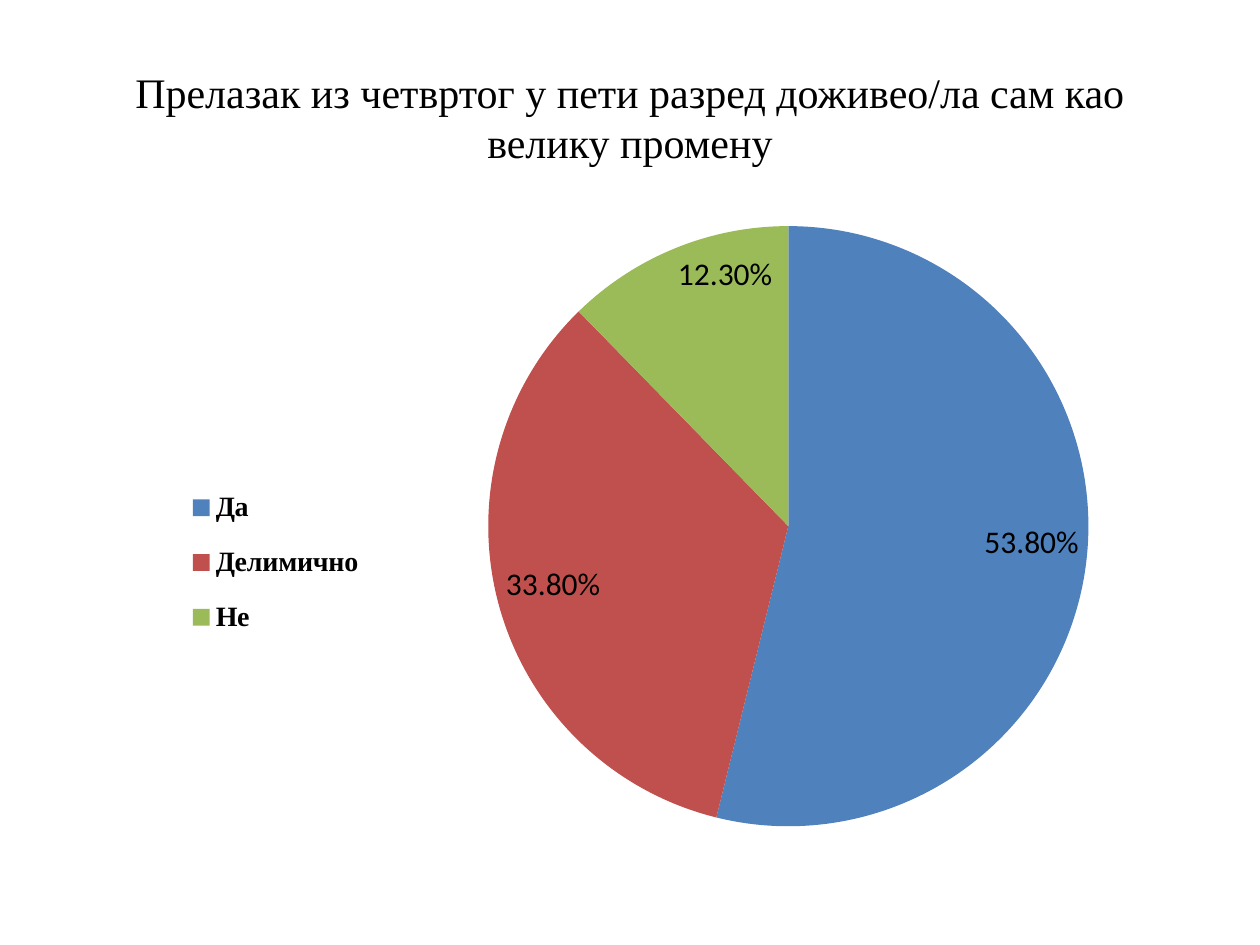
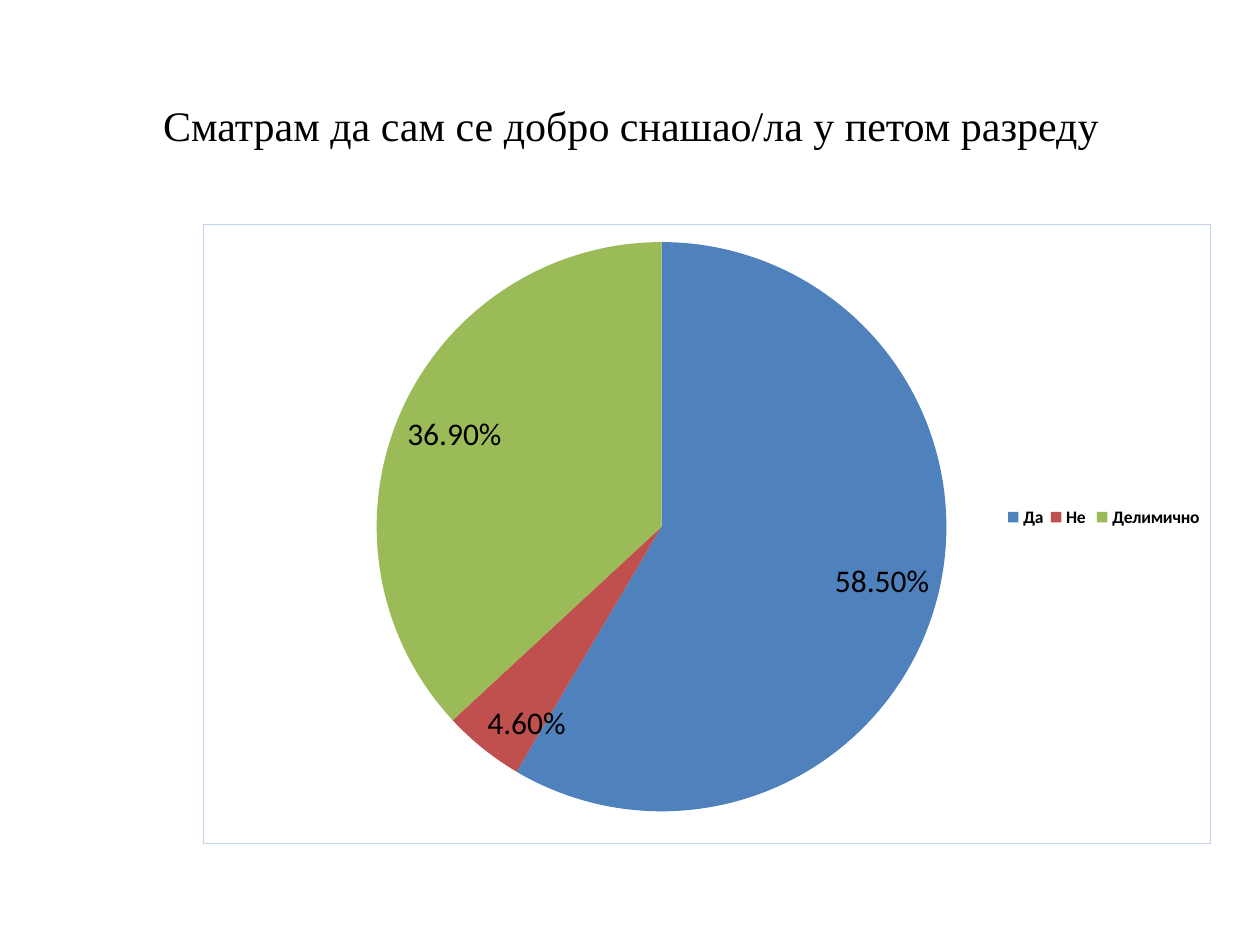
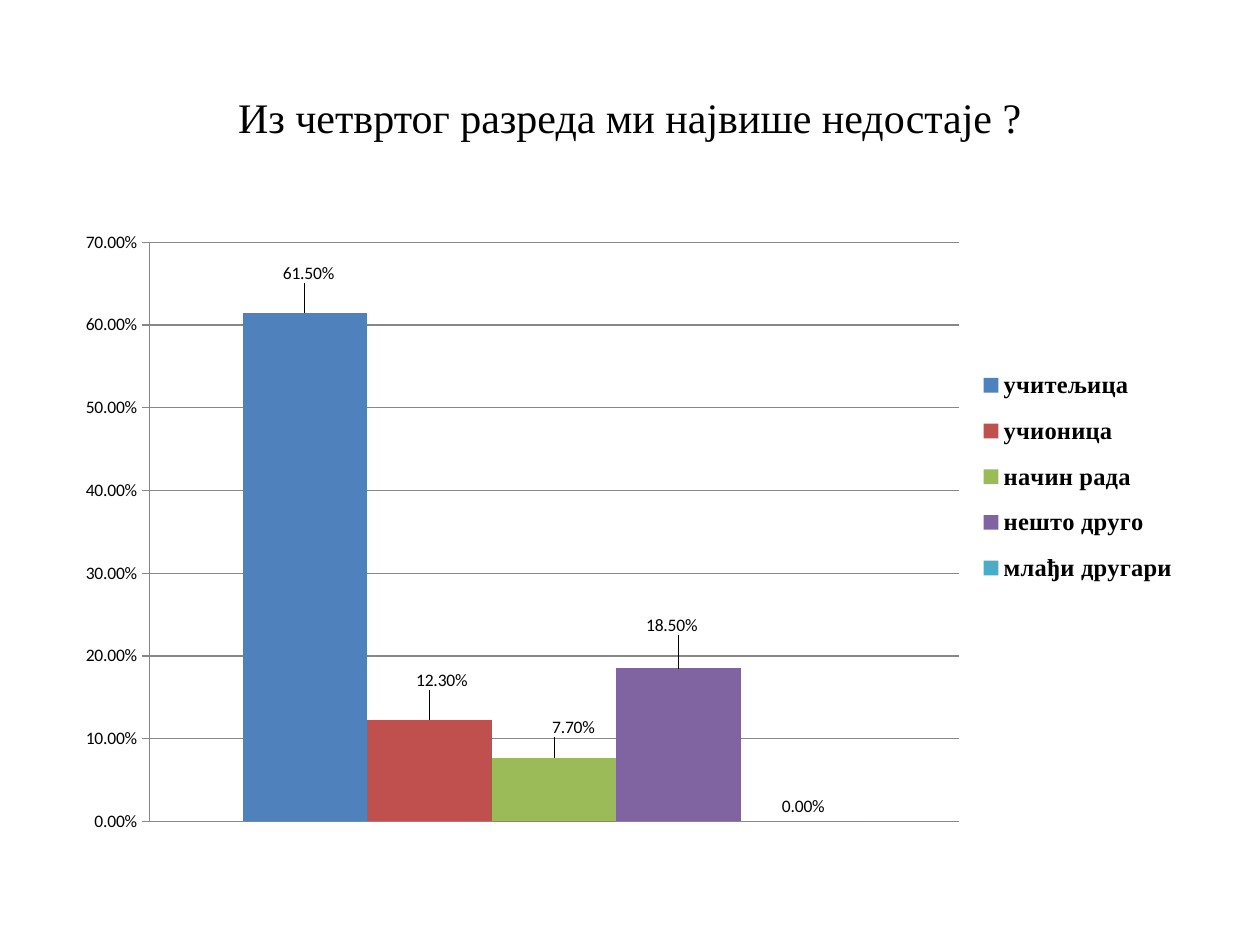
from dataclasses import dataclass
from typing import NamedTuple

from pptx import Presentation
from pptx.chart.chart import Chart
from pptx.chart.data import CategoryChartData
from pptx.dml.color import RGBColor
from pptx.enum.chart import XL_CHART_TYPE, XL_LABEL_POSITION, XL_LEGEND_POSITION, XL_TICK_MARK
from pptx.enum.text import MSO_ANCHOR, PP_ALIGN
from pptx.oxml import parse_xml
from pptx.oxml.ns import nsdecls
from pptx.slide import Slide
from pptx.util import Pt

BLACK = RGBColor(0x00, 0x00, 0x00)
WHITE = RGBColor(0xFF, 0xFF, 0xFF)
GRAY = RGBColor(0x87, 0x87, 0x87)
PALE = RGBColor(0xC2, 0xD1, 0xED)
HUES = [
    RGBColor(0x4F, 0x81, 0xBD),
    RGBColor(0xC0, 0x50, 0x4D),
    RGBColor(0x9B, 0xBB, 0x59),
    RGBColor(0x80, 0x64, 0xA2),
    RGBColor(0x4B, 0xAC, 0xC6),
]
SERIF = "Times New Roman"
SANS = "Calibri"
PERCENT = "0.00%"


class Box(NamedTuple):
    left: float
    top: float
    width: float
    height: float


class Shift(NamedTuple):
    right: float
    down: float


@dataclass(frozen=True)
class Key:
    box: Box
    side: XL_LEGEND_POSITION
    size: float
    font: str


@dataclass(frozen=True)
class Page:
    title: str
    head: Box
    frame: Box
    plot: Box
    key: Key
    shares: dict[str, float]
    border: RGBColor | None = None
    shifts: tuple[Shift, ...] = ()


LEFT = XL_LEGEND_POSITION.LEFT
RIGHT = XL_LEGEND_POSITION.RIGHT
HEAD = Box(36, 21.6, 648, 90)

PAGES = [
    Page(
        "Прелазак из четвртог у пети разред доживео/ла сам као велику промену",
        HEAD,
        Box(99.4, 100, 587, 382.4),
        Box(279, 129.2, 343, 343),
        Key(Box(106, 268, 103, 107), LEFT, 16, SERIF),
        {"Да": 0.538, "Делимично": 0.338, "Не": 0.123},
    ),
    Page(
        "Сматрам да сам се добро снашао/ла у петом разреду",
        HEAD._replace(left=36.7, top=26),
        Box(116, 128, 576, 354.4),
        Box(215, 138, 326, 326),
        Key(Box(572, 285, 118, 21), RIGHT, 10, SANS),
        {"Да": 0.585, "Не ": 0.046, "Делимично": 0.369},
        border=PALE,
    ),
    Page(
        "Из четвртог разреда ми највише недостаје ?",
        HEAD,
        Box(36, 126, 648, 356.4),
        Box(85.3, 138.5, 462.7, 331),
        Key(Box(554, 202, 124, 141), RIGHT, 14, SERIF),
        {
            "учитељица": 0.615,
            "учионица": 0.123,
            "начин рада": 0.077,
            "нешто друго": 0.185,
            "млађи другари": 0,
        },
        shifts=(Shift(2, -14), Shift(7, -14), Shift(11, -9), Shift(-4, -16)),
    ),
]


def points(box: Box) -> list[Pt]:
    return [Pt(side) for side in box]


def add_title(slide: Slide, page: Page) -> None:
    frame = slide.shapes.add_textbox(*points(page.head)).text_frame
    frame.word_wrap = True
    frame.vertical_anchor = MSO_ANCHOR.MIDDLE
    line = frame.paragraphs[0]
    line.alignment = PP_ALIGN.CENTER
    run = line.add_run()
    run.text = page.title
    run.font.name = SERIF
    run.font.size = Pt(24)
    run.font.color.rgb = BLACK


def layout(parts: dict[str, object]):
    rows = "".join(f'<c:{name} val="{value}"/>' for name, value in parts.items())
    return parse_xml(f'<c:layout {nsdecls("c")}><c:manualLayout>{rows}</c:manualLayout></c:layout>')


def fit(box: Box, frame: Box) -> dict[str, object]:
    return {
        "xMode": "edge",
        "yMode": "edge",
        "x": round((box.left - frame.left) / frame.width, 4),
        "y": round((box.top - frame.top) / frame.height, 4),
        "w": round(box.width / frame.width, 4),
        "h": round(box.height / frame.height, 4),
    }


def place_parts(chart: Chart, page: Page) -> None:
    root = chart.element
    for old in root.xpath(".//c:plotArea/c:layout | .//c:legend/c:layout"):
        old.getparent().remove(old)
    plot = {"layoutTarget": "inner"} | fit(page.plot, page.frame)
    root.xpath(".//c:plotArea")[0].insert(0, layout(plot))
    root.xpath(".//c:legendPos")[0].addnext(layout(fit(page.key.box, page.frame)))


def add_edge(chart: Chart, color: RGBColor | None) -> None:
    paint = f'<a:solidFill><a:srgbClr val="{color}"/></a:solidFill>' if color else "<a:noFill/>"
    edge = parse_xml(
        f'<c:spPr {nsdecls("c", "a")}><a:noFill/><a:ln w="{Pt(0.75)}">{paint}</a:ln></c:spPr>'
    )
    chart.element.xpath("./c:chart")[0].addnext(edge)


def add_chart(slide: Slide, page: Page, kind: XL_CHART_TYPE, data: CategoryChartData) -> Chart:
    chart = slide.shapes.add_chart(kind, *points(page.frame), data).chart
    chart.has_title = False
    chart.font.name = SANS
    chart.font.size = Pt(10)
    chart.font.color.rgb = BLACK
    chart.has_legend = True
    key = chart.legend
    key.position = page.key.side
    key.include_in_layout = False
    key.font.name = page.key.font
    key.font.size = Pt(page.key.size)
    key.font.bold = True
    key.font.color.rgb = BLACK
    place_parts(chart, page)
    add_edge(chart, page.border)
    return chart


def add_labels(series, size: float, spot: XL_LABEL_POSITION) -> None:
    labels = series.data_labels
    labels.show_value = True
    labels.number_format = PERCENT
    labels.number_format_is_linked = False
    labels.position = spot
    labels.font.name = SANS
    labels.font.size = Pt(size)
    labels.font.color.rgb = BLACK


def paint(item, color: RGBColor) -> None:
    item.format.fill.solid()
    item.format.fill.fore_color.rgb = color


def add_pie(slide: Slide, page: Page) -> None:
    data = CategoryChartData(number_format=PERCENT)
    data.categories = list(page.shares)
    data.add_series("Series 1", list(page.shares.values()))
    chart = add_chart(slide, page, XL_CHART_TYPE.PIE, data)
    chart.plots[0].vary_by_categories = True
    pie = chart.plots[0].series[0]
    for index in range(len(page.shares)):
        paint(pie.points[index], HUES[index])
    add_labels(pie, 18, XL_LABEL_POSITION.INSIDE_END)


def shift_labels(chart: Chart, page: Page) -> None:
    bars = chart.plots[0].series
    for bar, _ in zip(bars, page.shifts):
        label = bar.points[0].data_label
        label.position = XL_LABEL_POSITION.OUTSIDE_END
        label.font.size = Pt(10)
    for mark, shift in zip(chart.element.xpath(".//c:dLbl"), page.shifts):
        place = layout({
            "x": round(shift.right / page.frame.width, 4),
            "y": round(shift.down / page.frame.height, 4),
        })
        mark.xpath("./c:idx")[0].addnext(place)
        place.addnext(parse_xml(
            f'<c:numFmt {nsdecls("c")} formatCode="{PERCENT}" sourceLinked="0"/>'
        ))


def add_bars(slide: Slide, page: Page) -> None:
    data = CategoryChartData(number_format=PERCENT)
    data.categories = ["1"]
    for name, share in page.shares.items():
        data.add_series(name, [share])
    chart = add_chart(slide, page, XL_CHART_TYPE.COLUMN_CLUSTERED, data)
    plot = chart.plots[0]
    plot.vary_by_categories = False
    plot.gap_width = 150
    plot.overlap = 0
    for bar, color in zip(plot.series, HUES):
        paint(bar, color)
        bar.invert_if_negative = False
        add_labels(bar, 10, XL_LABEL_POSITION.OUTSIDE_END)
    shift_labels(chart, page)
    chart.category_axis.visible = False
    axis = chart.value_axis
    axis.minimum_scale = 0
    axis.maximum_scale = 0.7
    axis.major_unit = 0.1
    axis.major_tick_mark = XL_TICK_MARK.OUTSIDE
    axis.has_major_gridlines = True
    axis.tick_labels.number_format = PERCENT
    axis.tick_labels.number_format_is_linked = False
    for line in (axis.format.line, axis.major_gridlines.format.line):
        line.color.rgb = GRAY
        line.width = Pt(0.75)


def main() -> None:
    deck = Presentation()
    deck.slide_width = Pt(720)
    deck.slide_height = Pt(540)
    for page, draw in zip(PAGES, (add_pie, add_pie, add_bars)):
        slide = deck.slides.add_slide(deck.slide_layouts[6])
        slide.background.fill.solid()
        slide.background.fill.fore_color.rgb = WHITE
        add_title(slide, page)
        draw(slide, page)
    deck.save("out.pptx")


if __name__ == "__main__":
    main()
